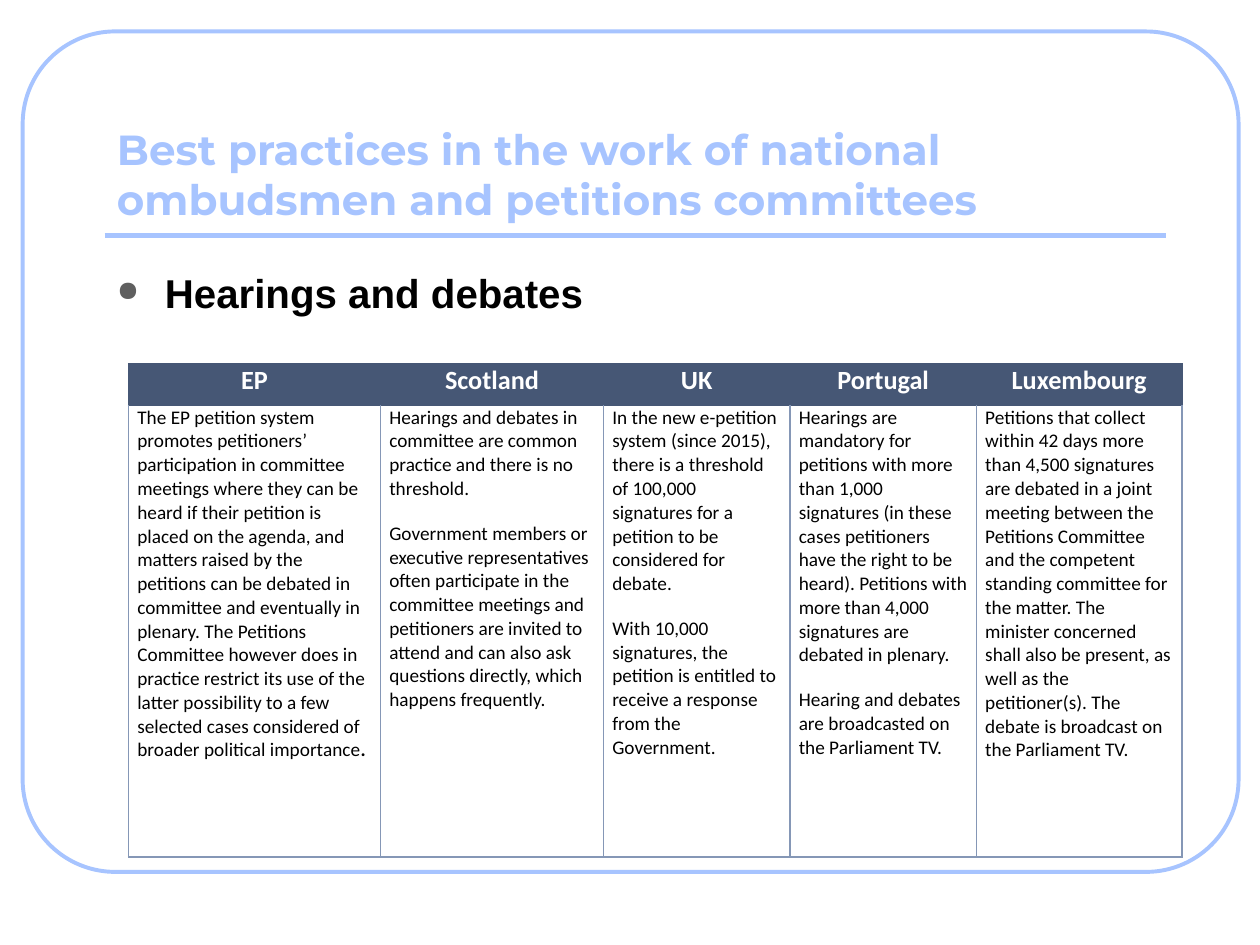
from dataclasses import dataclass

from lxml.etree import SubElement
from pptx import Presentation
from pptx.dml.color import RGBColor as RGB
from pptx.enum.shapes import MSO_CONNECTOR as Connector, MSO_SHAPE as Shape
from pptx.enum.text import MSO_ANCHOR as Anchor, PP_ALIGN as Align
from pptx.oxml import parse_xml
from pptx.oxml.ns import nsdecls, qn
from pptx.util import Inches, Pt


@dataclass(frozen=True)
class Theme:
    accent: str = "A7C4FF"
    header: str = "465775"
    border: str = "8597B6"
    bullet: str = "5F5F5F"
    black: str = "000000"
    white: str = "FFFFFF"
    title_font: str = "Montserrat"
    body_font: str = "Arial"
    table_font: str = "Calibri"
    title_size: float = 24
    body_size: float = 23
    header_size: float = 15
    cell_size: float = 11


THEME = Theme()
WIDTH, HEIGHT = 10, 7.5
COLUMN_WIDTHS = [2, 1.77, 1.48, 1.48, 1.63]
ROW_HEIGHTS = [0.33, 3.58]
PRACTICES = {
    "EP": [
        "The EP petition system promotes petitioners’ participation in committee meetings "
        "where they can be heard if their petition is placed on the agenda, and matters raised "
        "by the petitions can be debated in committee and eventually in plenary. The Petitions "
        "Committee however does in practice restrict its use of the latter possibility to a few "
        "selected cases considered of broader political importance",
    ],
    "Scotland": [
        "Hearings and debates in committee are common practice and there is no threshold.",
        "Government members or executive representatives often participate in the committee "
        "meetings and petitioners are invited to attend and can also ask questions directly, "
        "which happens frequently.",
    ],
    "UK": [
        "In the new e-petition system (since 2015), there is a threshold of 100,000 signatures "
        "for a petition to be considered for debate.",
        "With 10,000 signatures, the petition is entitled to receive a response from the "
        "Government.",
    ],
    "Portugal": [
        "Hearings are mandatory for petitions with more than 1,000 signatures (in these cases "
        "petitioners have the right to be heard). Petitions with more than 4,000 signatures are "
        "debated in plenary.",
        "Hearing and debates are broadcasted on the Parliament TV.",
    ],
    "Luxembourg": [
        "Petitions that collect within 42 days more than 4,500 signatures are debated in a "
        "joint meeting between the Petitions Committee and the competent standing committee "
        "for the matter. The minister concerned shall also be present, as well as the "
        "petitioner(s). The debate is broadcast on the Parliament TV.",
    ],
}


def write(paragraph, text, *, font, size, color, bold=False, align=Align.LEFT, before=0):
    """Add one formatted run to a paragraph."""
    paragraph.alignment = align
    paragraph.space_before = Pt(before)
    run = paragraph.add_run()
    run.text = text
    run.font.name = font
    run.font.size = Pt(size)
    run.font.bold = bold
    run.font.color.rgb = RGB.from_string(color)


def add_text_frame(slide, box, anchor):
    frame = slide.shapes.add_textbox(*map(Inches, box)).text_frame
    frame.word_wrap = True
    frame.vertical_anchor = anchor
    return frame


def add_bullet(paragraph, indent):
    properties = paragraph._p.get_or_add_pPr()
    properties.set("marL", str(Inches(indent)))
    properties.set("indent", str(-Inches(indent)))
    color = SubElement(properties, qn("a:buClr"))
    SubElement(color, qn("a:srgbClr"), val=THEME.bullet)
    SubElement(properties, qn("a:buSzPct"), val="70000")
    SubElement(properties, qn("a:buChar"), char="●")


def style_cell(cell, fill, borders):
    """Set margins, fill and the left, right, top and bottom borders."""
    cell.margin_left = cell.margin_right = Inches(0.07)
    cell.margin_top = cell.margin_bottom = 0
    if fill:
        cell.fill.solid()
        cell.fill.fore_color.rgb = RGB.from_string(fill)
    else:
        cell.fill.background()
    properties = cell._tc.get_or_add_tcPr()
    for position, (side, color) in enumerate(zip("LRTB", borders)):
        properties.insert(position, parse_xml(
            f'<a:ln{side} {nsdecls("a")} w="{Pt(1)}"><a:solidFill>'
            f'<a:srgbClr val="{color}"/></a:solidFill></a:ln{side}>'))


def draw_frame(slide, box):
    """Rounded outline around the slide."""
    frame = slide.shapes.add_shape(Shape.ROUNDED_RECTANGLE, *map(Inches, box))
    frame.adjustments[0] = 0.11
    frame.shadow.inherit = False
    frame.fill.background()
    frame.line.color.rgb = RGB.from_string(THEME.accent)
    frame.line.width = Pt(2.25)


def draw_title(slide, box):
    """Title with a rule just below its box."""
    left, top, width, height = box
    frame = add_text_frame(slide, box, Anchor.BOTTOM)
    write(frame.paragraphs[0],
          "Best practices in the work of national ombudsmen and petitions committees",
          font=THEME.title_font, size=THEME.title_size, color=THEME.accent, bold=True)
    rule_y = top + height + 0.04
    rule = slide.shapes.add_connector(
        Connector.STRAIGHT, *map(Inches, (left, rule_y, left + width, rule_y)))
    rule.line.color.rgb = RGB.from_string(THEME.accent)
    rule.line.width = Pt(3)
    SubElement(rule._element.spPr, qn("a:effectLst"))


def draw_body(slide, box):
    """Bulleted heading."""
    paragraph = add_text_frame(slide, box, Anchor.TOP).paragraphs[0]
    write(paragraph, "Hearings and debates", font=THEME.body_font, size=THEME.body_size,
          color=THEME.black, bold=True, before=0.2 * THEME.body_size)
    add_bullet(paragraph, 0.38)


def draw_table(slide, left, top):
    """One column per parliament: name above, practice below."""
    size = sum(COLUMN_WIDTHS), sum(ROW_HEIGHTS)
    table = slide.shapes.add_table(len(ROW_HEIGHTS), len(COLUMN_WIDTHS),
                                   *map(Inches, (left, top, *size))).table
    table.horz_banding = False
    for row, height in zip(table.rows, ROW_HEIGHTS):
        row.height = Inches(height)
    for column, width in zip(table.columns, COLUMN_WIDTHS):
        column.width = Inches(width)

    body_format = dict(font=THEME.table_font, size=THEME.cell_size,
                       color=THEME.black, before=12)
    for index, (name, texts) in enumerate(PRACTICES.items()):
        header, body = table.cell(0, index), table.cell(1, index)
        style_cell(header, THEME.header, [THEME.header] * 4)
        style_cell(body, None, [THEME.border, THEME.border, THEME.header, THEME.border])
        write(header.text_frame.paragraphs[0], name, font=THEME.table_font,
              size=THEME.header_size, color=THEME.white, bold=True,
              align=Align.CENTER, before=12)
        frame = body.text_frame
        for number, text in enumerate(texts):
            paragraph = frame.add_paragraph() if number else frame.paragraphs[0]
            write(paragraph, text, **body_format)

    # The first practice ends in a bold full stop
    write(table.cell(1, 0).text_frame.paragraphs[0], ".", bold=True, **body_format)


def main():
    presentation = Presentation()
    presentation.slide_width, presentation.slide_height = Inches(WIDTH), Inches(HEIGHT)
    slide = presentation.slides.add_slide(presentation.slide_layouts[6])
    draw_frame(slide, (0.18, 0.25, 9.65, 6.67))
    draw_title(slide, (0.83, 0.58, 8.42, 1.25))
    draw_body(slide, (0.83, 2.08, 8.42, 4.42))
    draw_table(slide, 1.02, 2.89)
    presentation.save("out.pptx")


if __name__ == "__main__":
    main()
